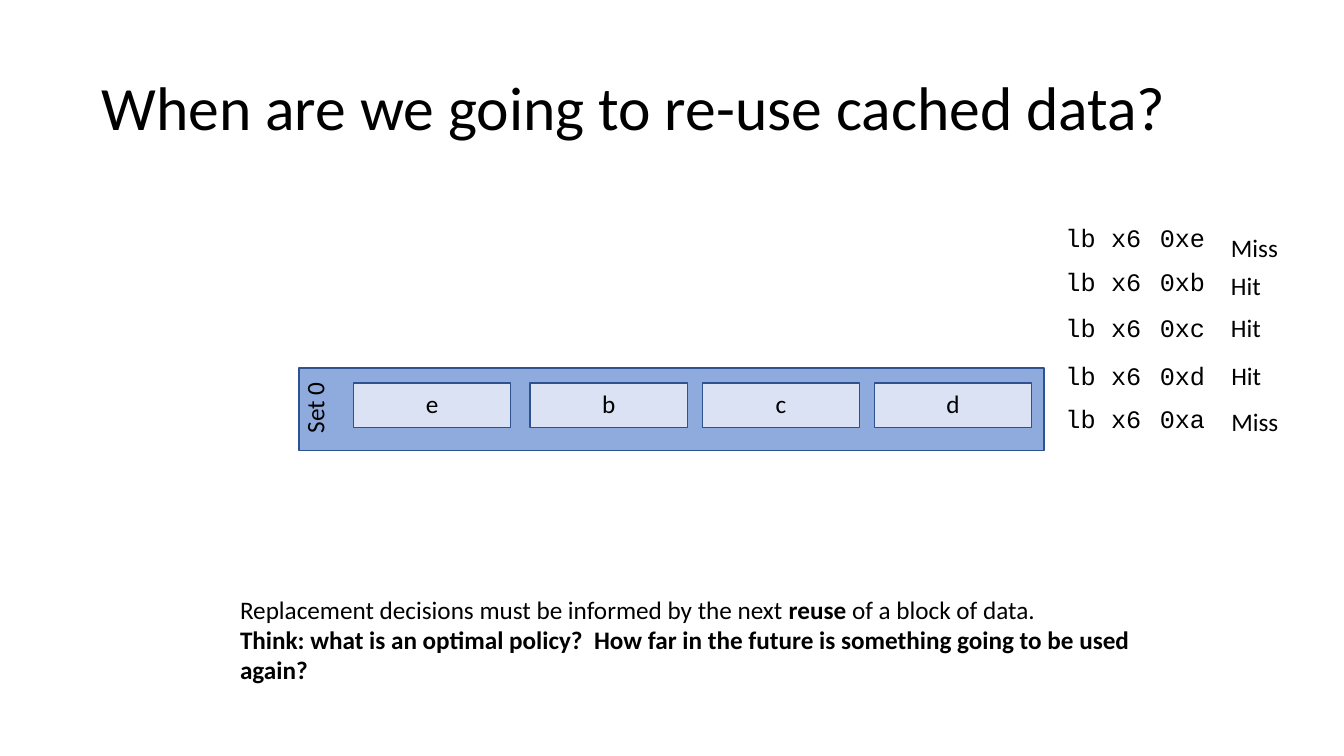
from pptx import Presentation
from pptx.dml.color import RGBColor
from pptx.enum.shapes import MSO_SHAPE
from pptx.enum.text import MSO_ANCHOR, PP_ALIGN
from pptx.util import Cm, Pt

RECTANGLE = MSO_SHAPE.RECTANGLE
TOP = MSO_ANCHOR.TOP
LEFT, CENTER, RIGHT = PP_ALIGN.LEFT, PP_ALIGN.CENTER, PP_ALIGN.RIGHT
BLACK, SET_FILL, BLOCK_FILL, OUTLINE = "000000", "8FAADC", "DAE2F3", "2E528F"
BODY_FONT, CODE_FONT = "Calibri", "Courier New"


def color(hex_text):
    """Turn a hex string into a colour."""
    return RGBColor.from_string(hex_text)


def style_paragraph(para, spans, size=18, font=BODY_FONT, align=LEFT,
                    indent=0.0, before=0.0, spacing=None):
    """Write (text, bold) spans into a paragraph and format it."""
    para.font.size = Pt(size)
    para.font.name = font
    para.font.color.rgb = color(BLACK)
    para.alignment = align
    para.space_before = Pt(before)
    para.line_spacing = spacing
    para._p.get_or_add_pPr().set("marL", str(Cm(indent)))
    for text, bold in spans:
        span = para.add_run()
        span.text = text
        span.font.bold = bold


def prepare_frame(frame, top_margin=0.03):
    """Set wrapping, margins and anchor of a text frame."""
    frame.word_wrap = True
    frame.margin_left = frame.margin_right = frame.margin_bottom = 0
    frame.margin_top = Cm(top_margin)
    frame.vertical_anchor = TOP


def add_text(page, box, paragraphs):
    """Add a text box holding (spans, format) paragraphs."""
    frame = page.shapes.add_textbox(*map(Cm, box)).text_frame
    prepare_frame(frame)
    for index, (spans, layout) in enumerate(paragraphs):
        para = frame.add_paragraph() if index else frame.paragraphs[0]
        style_paragraph(para, spans, **layout)


def add_rectangle(page, box, fill, top_margin):
    """Add an outlined rectangle with a prepared text frame."""
    shape = page.shapes.add_shape(RECTANGLE, *map(Cm, box))
    shape.shadow.inherit = False
    shape.fill.solid()
    shape.fill.fore_color.rgb = color(fill)
    shape.line.color.rgb = color(OUTLINE)
    shape.line.width = Pt(1)
    prepare_frame(shape.text_frame, top_margin)
    return shape


def add_cache_set(page, box):
    """Draw the cache set with its vertical label and four blocks."""
    left, top, _, _ = box
    cache_set = add_rectangle(page, box, SET_FILL, 0.03)
    frame = cache_set.text_frame
    frame._txBody.bodyPr.set("vert", "vert270")
    style_paragraph(frame.paragraphs[0], [("Set 0", False)], indent=0.43, before=0.7)
    for name, offset in zip("ebcd", (1.37, 5.82, 10.16, 14.5)):
        block = add_rectangle(page, (left + offset, top + 0.38, 3.96, 1.12),
                              BLOCK_FILL, 0.13)
        style_paragraph(block.text_frame.paragraphs[0], [(name, False)],
                        align=CENTER, before=3.9)


def add_loads(page, box):
    """Draw the table of load instructions."""
    loads = (("0xe", 1.02, 0, 0), ("0xb", 1.14, 0.1, 3), ("0xc", 1.19, 0.13, 3.3),
             ("0xd", 1.14, 0.15, 4), ("0xa", 0.99, 0.08, 1.9))
    columns = (("lb", 1.04, LEFT, 0.08), ("x6", 1.14, CENTER, 0), ("", 1.42, RIGHT, 0))
    table = page.shapes.add_table(len(loads), len(columns), *map(Cm, box)).table
    table.first_row = table.horz_banding = False
    for row, (address, height, margin, before) in enumerate(loads):
        table.rows[row].height = Cm(height)
        for column, (text, width, align, indent) in enumerate(columns):
            table.columns[column].width = Cm(width)
            cell = table.cell(row, column)
            cell.fill.background()
            cell.margin_left = cell.margin_right = cell.margin_bottom = 0
            cell.margin_top = Cm(margin)
            style_paragraph(cell.text_frame.paragraphs[0], [(text or address, False)],
                            font=CODE_FONT, align=align, indent=indent, before=before,
                            spacing=None if row else Pt(21.1))


def add_outcomes(page, box):
    """Write the hit or miss outcome beside each load."""
    left, top, width, height = box
    add_text(page, (left, top, width, 3.07), [
        ([("Miss Hit", False)], {"indent": 0.03, "before": 1, "spacing": 1.27}),
        ([("Hit", False)], {"indent": 0.03, "before": 8.5})])
    add_text(page, (left, top + 3.05, width, height - 3.05), [
        ([("Hit Miss", False)], {"indent": 0.04, "before": 1, "spacing": 1.52})])


def add_title(page, box):
    """Write the slide title."""
    add_text(page, box, [([("When are we going to re-use cached data?", False)],
                          {"size": 44, "indent": 2.08, "before": 1.1})])


def add_takeaway(page, box):
    """Write the closing remark and question."""
    remark = [("Replacement decisions must be informed by the next ", False),
              ("reuse ", True), ("of a block of data.", False)]
    question = [("Think: what is an optimal policy?  How far in the future "
                 "is something going to be used again?", True)]
    add_text(page, box, [(remark, {"indent": 0.03, "before": 1}),
                         (question, {"indent": 0.03})])


def main():
    """Build and save the slide."""
    deck = Presentation()
    deck.slide_width, deck.slide_height = Cm(33.87), Cm(19.05)
    page = deck.slides.add_slide(deck.slide_layouts[6])
    add_loads(page, (26.77, 5.69, 3.6, 5.48))
    add_title(page, (0.48, 1.7, 32.89, 1.93))
    add_cache_set(page, (7.54, 9.27, 18.77, 2.08))
    add_outcomes(page, (30.99, 5.61, 1.27, 5.44))
    add_takeaway(page, (6.02, 14.94, 24.31, 1.6))
    deck.save("out.pptx")


if __name__ == "__main__":
    main()
